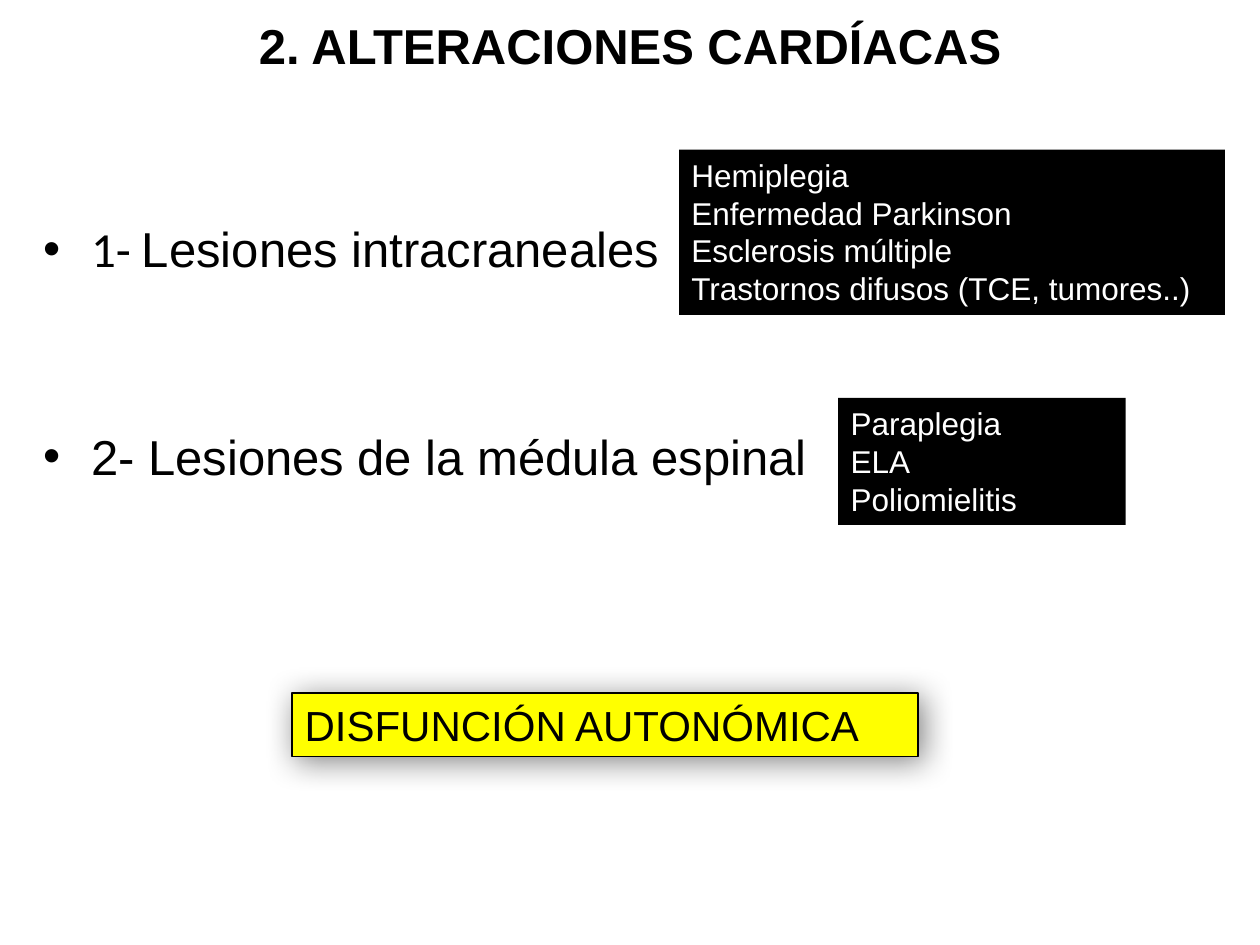
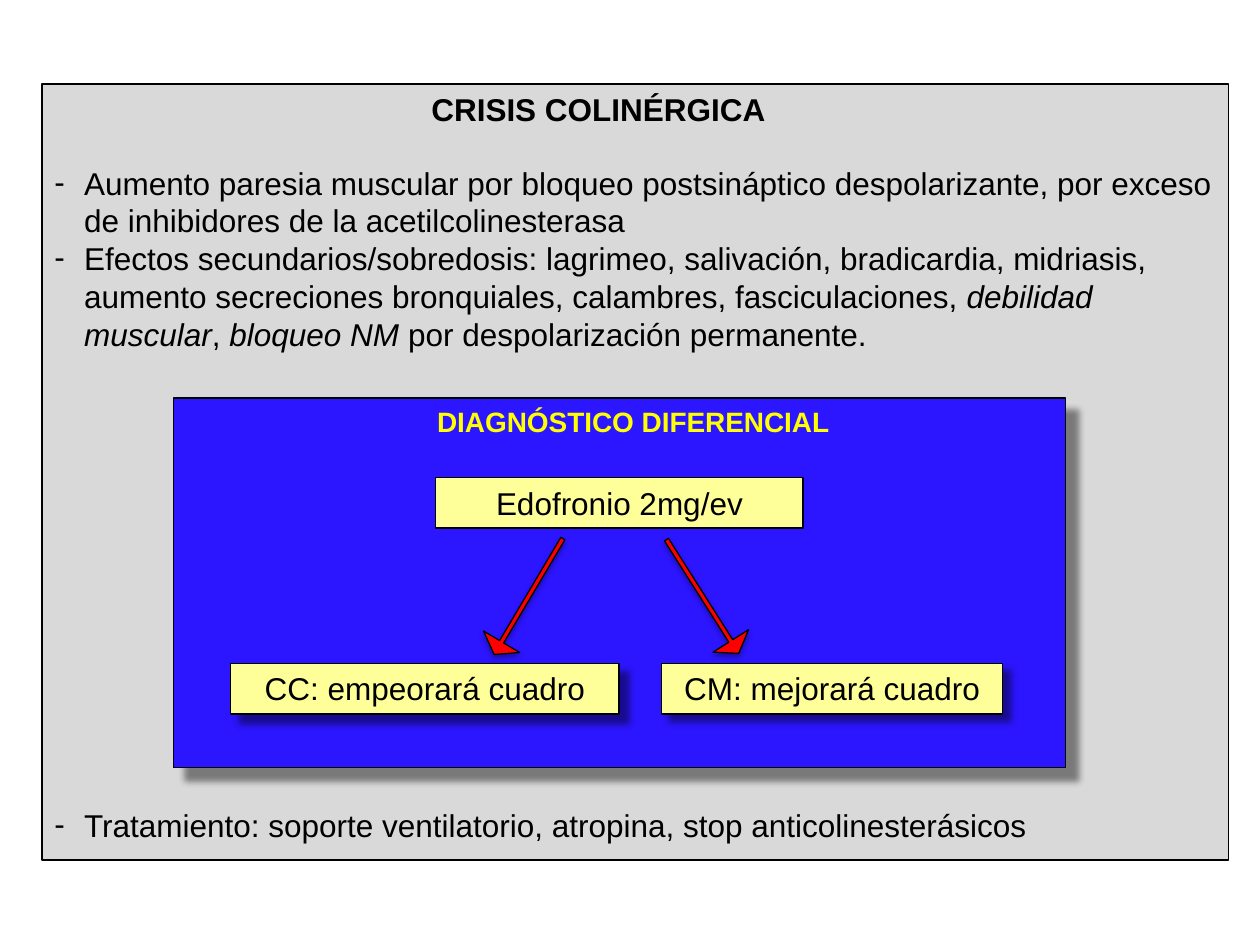
from lxml.etree import SubElement
from pptx import Presentation
from pptx.dml.color import RGBColor
from pptx.enum.shapes import MSO_SHAPE as Preset
from pptx.enum.text import MSO_ANCHOR as Anchor, MSO_AUTO_SIZE as AutoSize, PP_ALIGN as Align
from pptx.oxml.ns import qn
from pptx.util import Pt

BLACK, WHITE, GREY = "000000", "FFFFFF", "D9D9D9"
BLUE, RED = "2C15FF", "FF0000"
YELLOW, PALE_YELLOW = "FFFF00", "FFFF99"
TITLE_ONLY = 5


def color(hex_code):
    return RGBColor.from_string(hex_code)


class Builder:
    """Holds the deck, its text style and the current page."""

    font = "Arial"

    def __init__(self):
        self.deck = Presentation()
        self.deck.slide_width, self.deck.slide_height = Pt(720), Pt(540)
        self.page = None

    def add_page(self):
        self.page = self.deck.slides.add_slide(self.deck.slide_layouts[TITLE_ONLY])

    def title(self, text, left, top, width, height, size):
        """Fill the title placeholder and bring it in front of what is drawn so far."""
        title = self.page.shapes.title
        self.place(title, left, top, width, height)
        frame = title.text_frame
        frame.auto_size, frame.vertical_anchor = AutoSize.NONE, Anchor.MIDDLE
        para = frame.paragraphs[0]
        para.alignment = Align.CENTER
        self.span(para, text, size, bold=True)
        tree = title.element.getparent()
        tree.append(title.element)

    def place(self, shape, left, top, width, height):
        shape.left, shape.top = Pt(left), Pt(top)
        shape.width, shape.height = Pt(width), Pt(height)

    def span(self, para, text, size, ink=BLACK, bold=False, italic=False, font=None):
        span = para.add_run()
        span.text = text
        span.font.name, span.font.size = font or self.font, Pt(size)
        span.font.bold, span.font.italic = bold, italic
        span.font.color.rgb = color(ink)

    def shape(self, preset, area, fill, line=None, shadow=None):
        """Draw a preset shape; shadow is (opacity %, blur, distance, angle)."""
        shape = self.page.shapes.add_shape(preset, *map(Pt, area))
        shape.shadow.inherit = False
        shape.fill.solid()
        shape.fill.fore_color.rgb = color(fill)
        if line:
            shape.line.color.rgb = color(BLACK)
            shape.line.width = Pt(line)
        else:
            shape.line.fill.background()
        if shadow:
            self.cast_shadow(shape, *shadow)
        return shape

    def cast_shadow(self, shape, opacity, blur, distance, angle):
        effects = shape.element.spPr.find(qn("a:effectLst"))
        outer = SubElement(effects, qn("a:outerShdw"), blurRad=str(Pt(blur)),
                           dist=str(Pt(distance)), dir=str(angle * 60000),
                           algn="ctr", rotWithShape="0")
        tint = SubElement(outer, qn("a:srgbClr"), val=BLACK)
        SubElement(tint, qn("a:alpha"), val=str(opacity * 1000))

    def box(self, area, lines, fill, size=18, ink=BLACK, bold=False,
            align=Align.LEFT, line=None, shadow=None):
        """Draw a filled rectangle with one plain paragraph for each line."""
        box = self.shape(Preset.RECTANGLE, area, fill, line, shadow)
        frame = box.text_frame
        frame.word_wrap, frame.vertical_anchor = True, Anchor.TOP
        for number, text in enumerate(lines):
            para = frame.add_paragraph() if number else frame.paragraphs[0]
            para.alignment = align
            self.span(para, text, size, ink, bold)
        return box

    def bullets(self, frame, items, sign, size, indent):
        """Write items of (space before, [(text, span style), ...]) with hanging bullets."""
        frame.word_wrap = True
        for number, (gap, spans) in enumerate(items):
            para = frame.add_paragraph() if number else frame.paragraphs[0]
            para.alignment, para.space_before = Align.LEFT, Pt(gap)
            for text, style in spans:
                self.span(para, text, size, **style)
            props = para._p.get_or_add_pPr()
            props.set("marL", str(Pt(indent)))
            props.set("indent", str(-Pt(indent)))
            SubElement(props, qn("a:buFont"), typeface=self.font)
            SubElement(props, qn("a:buChar"), char=sign)

    def arrow(self, left, rotation):
        arrow = self.shape(Preset.DOWN_ARROW, (left, 302.4, 24, 77), RED, 0.75,
                           (35, 3.1, 1.8, 90))
        arrow.adjustments[0], arrow.adjustments[1] = 0.11, 0.35
        arrow.rotation = rotation


def add_cardiac_page(build):
    build.add_page()
    lesions = build.page.shapes.add_textbox(Pt(18), Pt(121.5), Pt(618), Pt(220))
    build.bullets(lesions.text_frame, [
        (0, [("1- ", {"font": "Calibri"}), ("Lesiones intracraneales", {})]),
        (85, [("2- Lesiones de la médula espinal", {})]),
    ], "•", 28, 27)
    build.box((388, 85.5, 312, 94.5),
              ["Hemiplegia", "Enfermedad Parkinson", "Esclerosis múltiple",
               "Trastornos difusos (TCE, tumores..)"], BLACK, ink=WHITE)
    build.box((479, 227.3, 164.3, 72.7), ["Paraplegia", "ELA", "Poliomielitis"],
              BLACK, ink=WHITE)
    build.title("2. ALTERACIONES CARDÍACAS", 36, -2, 648, 55, 28)
    build.box((167, 396, 357.8, 36.4), ["DISFUNCIÓN AUTONÓMICA"], YELLOW, 24,
              line=1, shadow=(48, 18, 3, 45))


def add_cholinergic_page(build):
    build.add_page()
    panel = build.shape(Preset.RECTANGLE, (24, 48, 678, 443.5), GREY, 0.75)
    frame = panel.text_frame
    frame.vertical_anchor, frame.margin_top = Anchor.TOP, Pt(45.5)
    italic = {"italic": True}
    build.bullets(frame, [
        (0, [("Aumento paresia muscular por bloqueo postsináptico despolarizante, "
              "por exceso de inhibidores de la acetilcolinesterasa", {})]),
        (0, [("Efectos secundarios/sobredosis: lagrimeo, salivación, bradicardia, "
              "midriasis, aumento secreciones bronquiales, calambres, "
              "fasciculaciones, ", {}),
             ("debilidad muscular", italic), (", ", {}), ("bloqueo NM ", italic),
             ("por despolarización permanente.", {})]),
        (259, [("Tratamiento: soporte ventilatorio, atropina, "
                "stop anticolinesterásicos", {})]),
    ], "-", 18, 17)
    build.title("CRISIS COLINÉRGICA", 202, 48.5, 280, 28, 18)

    diagnosis = build.box((99, 227.5, 510, 211), ["DIAGNÓSTICO DIFERENCIAL"], BLUE, 16,
                          YELLOW, True, Align.CENTER, 0.75, (43, 4, 10, 45))
    diagnosis.text_frame.margin_left = Pt(23)
    for text, left, top, width, shadow in (
            ("Edofronio 2mg/ev", 249, 272.8, 210, None),
            ("CC: empeorará cuadro", 131.8, 379, 222, (43, 4, 7, 45)),
            ("CM: mejorará cuadro", 378, 379, 195, (43, 4, 6, 45))):
        build.box((left, top, width, 29), [text], PALE_YELLOW, align=Align.CENTER,
                  line=0.75, shadow=shadow)
    build.arrow(389.5, 327.6)
    build.arrow(290, 30.7)


def main():
    build = Builder()
    add_cardiac_page(build)
    add_cholinergic_page(build)
    build.deck.save("out.pptx")


if __name__ == "__main__":
    main()
